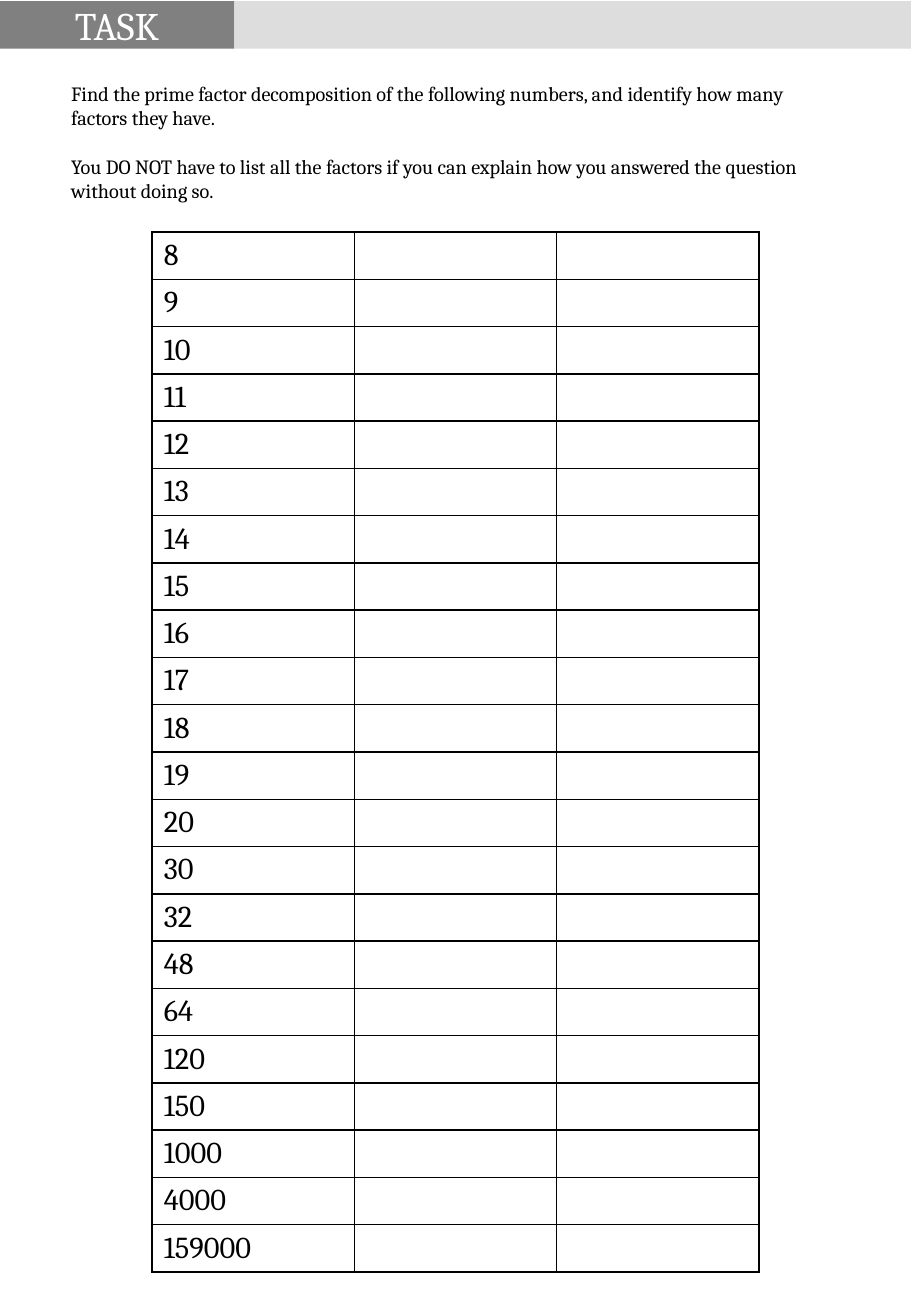
from lxml import etree
from pptx import Presentation
from pptx.dml.color import RGBColor
from pptx.enum.shapes import MSO_SHAPE
from pptx.enum.text import MSO_ANCHOR, PP_ALIGN
from pptx.oxml.ns import qn
from pptx.util import Inches, Pt

RECTANGLE = MSO_SHAPE.RECTANGLE
ROUNDED = MSO_SHAPE.ROUNDED_RECTANGLE
TOP, MIDDLE = MSO_ANCHOR.TOP, MSO_ANCHOR.MIDDLE
LEFT, CENTER = PP_ALIGN.LEFT, PP_ALIGN.CENTER

BLACK = RGBColor(0x00, 0x00, 0x00)
WHITE = RGBColor(0xFF, 0xFF, 0xFF)
DARK_GREY = RGBColor(0x80, 0x80, 0x80)
LIGHT_GREY = RGBColor(0xDD, 0xDD, 0xDD)

INSTRUCTIONS = [
    "Find the prime factor decomposition of the following numbers, "
    "and identify how many factors they have.",
    "You DO NOT have to list all the factors if you can explain "
    "how you answered the question without doing so.",
]
NUMBERS = [*range(8, 21), 30, 32, 48, 64, 120, 150, 1000, 4000, 159000]


class Worksheet:
    """Draws the elements of a worksheet slide in one shared style."""

    font_name = "Cambria"

    def __init__(self, slide):
        self.slide = slide

    def add_words(self, paragraph, words, size, color):
        run = paragraph.add_run()
        run.text = words
        font_format = {"name": self.font_name, "size": Pt(size)}
        for attribute, value in font_format.items():
            setattr(run.font, attribute, value)
        run.font.color.rgb = color

    def panel(self, kind, box, fill=None):
        panel = self.slide.shapes.add_shape(kind, *map(Inches, box))
        panel.shadow.inherit = False
        panel.line.fill.background()
        if fill is None:
            panel.fill.background()
        else:
            panel.fill.solid()
            panel.fill.fore_color.rgb = fill
        return panel

    def text(self, panel, lines, size, color, align, anchor, gap=0):
        frame = panel.text_frame
        frame.word_wrap = True
        frame.vertical_anchor = anchor
        for index, line in enumerate(lines):
            paragraph = frame.add_paragraph() if index else frame.paragraphs[0]
            paragraph.alignment = align
            if index:
                paragraph.space_before = Pt(gap)
            self.add_words(paragraph, line, size, color)

    def border(self, cell, color, width):
        properties = cell._tc.get_or_add_tcPr()
        for side in ("a:lnL", "a:lnR", "a:lnT", "a:lnB"):
            line = etree.SubElement(properties, qn(side), w=str(Pt(width)))
            solid = etree.SubElement(line, qn("a:solidFill"))
            etree.SubElement(solid, qn("a:srgbClr"), val=str(color))

    def answer_table(self, labels, columns, box, size):
        table = self.slide.shapes.add_table(
            len(labels), columns, *map(Inches, box)).table
        for flag in ("first_row", "horz_banding"):
            setattr(table, flag, False)
        for row, label in enumerate(labels):
            for column in range(columns):
                cell = table.cell(row, column)
                self.border(cell, BLACK, 1)
                cell.fill.background()
                paragraph = cell.text_frame.paragraphs[0]
                if column == 0:
                    self.add_words(paragraph, str(label), size, BLACK)
                else:
                    blank = etree.SubElement(
                        paragraph._p, qn("a:endParaRPr"), sz=str(size * 100))
                    etree.SubElement(
                        blank, qn("a:latin"), typeface=self.font_name)


def main():
    presentation = Presentation()
    presentation.slide_width = Inches(7.5)
    presentation.slide_height = Inches(10.83)
    sheet = Worksheet(
        presentation.slides.add_slide(presentation.slide_layouts[6]))

    heading = sheet.panel(RECTANGLE, (0, 0.01, 1.93, 0.39), DARK_GREY)
    sheet.text(heading, ["TASK"], 23.1, WHITE, CENTER, MIDDLE)
    sheet.panel(RECTANGLE, (1.93, 0.01, 5.57, 0.39), LIGHT_GREY)

    task = sheet.panel(ROUNDED, (0.41, 0.54, 6.68, 9.7))
    task.adjustments[0] = 0.04
    sheet.text(task, INSTRUCTIONS, 12, BLACK, LEFT, TOP, gap=14.4)

    sheet.answer_table(NUMBERS, 3, (1.25, 1.91, 5, 8.29), 18)
    presentation.save("out.pptx")


if __name__ == "__main__":
    main()
